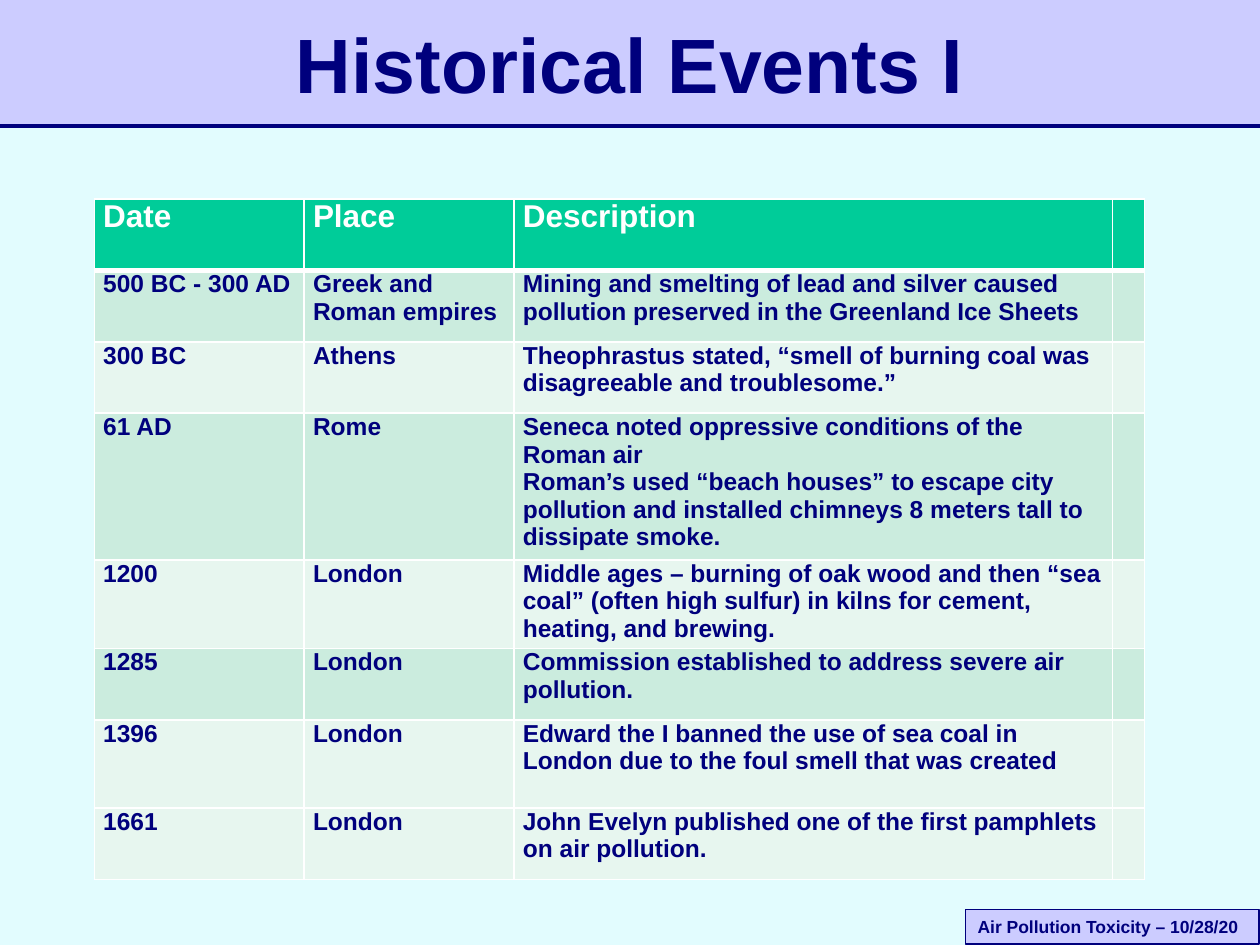
import pptx
import pptx.dml.color
import pptx.enum.shapes
import pptx.enum.text
import pptx.oxml
import pptx.oxml.ns
import pptx.util
from lxml import etree

Cm, Pt = pptx.util.Cm, pptx.util.Pt
RGBColor = pptx.dml.color.RGBColor
ALIGN = pptx.enum.text.PP_ALIGN
MIDDLE = pptx.enum.text.MSO_ANCHOR.MIDDLE

NAVY = RGBColor(0x00, 0x00, 0x7D)
LILAC = RGBColor(0xCC, 0xCC, 0xFF)
PALE_CYAN = RGBColor(0xE2, 0xFC, 0xFE)
GREEN = RGBColor(0x00, 0xCC, 0x99)
MINT = RGBColor(0xCB, 0xEC, 0xDE)
PALE_MINT = RGBColor(0xE7, 0xF6, 0xEF)
WHITE = RGBColor(0xFF, 0xFF, 0xFF)

SLIDE_W, SLIDE_H = 25.4, 19.05
BAND_H = 2.54

COL_WIDTHS = [4.23, 4.23, 12.07, 0.64]
HEADERS = ["Date", "Place", "Description"]
# Row height, fill and cell texts
EVENTS = [
    (1.44, MINT, ["500 BC - 300 AD", "Greek and Roman empires",
                  "Mining and smelting of lead and silver caused pollution "
                  "preserved in the Greenland Ice Sheets"]),
    (1.44, PALE_MINT, ["300 BC", "Athens",
                       "Theophrastus stated, “smell of burning coal was "
                       "disagreeable and troublesome.”"]),
    (2.96, MINT, ["61 AD", "Rome",
                  "Seneca noted oppressive conditions of the Roman air\n"
                  "Roman’s used “beach houses” to escape city pollution and "
                  "installed chimneys 8 meters tall to dissipate smoke."]),
    (1.78, PALE_MINT, ["1200", "London",
                       "Middle ages – burning of oak wood and then “sea coal” "
                       "(often high sulfur) in kilns for cement, heating, and brewing."]),
    (1.44, MINT, ["1285", "London",
                  "Commission established to address severe air pollution."]),
    (1.78, PALE_MINT, ["1396", "London",
                       "Edward the I banned the use of sea coal in London due to "
                       "the foul smell that was created"]),
    (1.44, PALE_MINT, ["1661", "London",
                       "John Evelyn published one of the first pamphlets on air pollution."]),
]


def set_attrs(obj, values):
    for name, value in values.items():
        setattr(obj, name, value)


class SlideBuilder:
    font = {"name": "Arial", "bold": True}

    def __init__(self, prs):
        self.s = prs.slides.add_slide(prs.slide_layouts[5])
        fill = self.s.background.fill
        fill.solid()
        fill.fore_color.rgb = PALE_CYAN

    def put_text(self, tf, text, size, color=NAVY, align=ALIGN.LEFT):
        tf.text = text
        for p in tf.paragraphs:
            p.alignment = align
            for r in p.runs:
                set_attrs(r.font, {**self.font, "size": Pt(size)})
                r.font.color.rgb = color

    def title(self, text, x, y, w, h):
        sp = self.s.shapes.title
        set_attrs(sp, {"left": Cm(x), "top": Cm(y), "width": Cm(w), "height": Cm(h)})
        set_attrs(sp.text_frame, {"vertical_anchor": MIDDLE, "word_wrap": True,
                                  "auto_size": pptx.enum.text.MSO_AUTO_SIZE.NONE})
        self.put_text(sp.text_frame, text, 44, align=ALIGN.CENTER)
        # Bring the title in front of the header band
        self.s.shapes.element.append(sp.element)

    def rect(self, x, y, w, h, line_width=None):
        sp = self.s.shapes.add_shape(pptx.enum.shapes.MSO_SHAPE.RECTANGLE,
                                     Cm(x), Cm(y), Cm(w), Cm(h))
        sp.shadow.inherit = False
        sp.fill.solid()
        sp.fill.fore_color.rgb = LILAC
        if line_width:
            sp.line.color.rgb = NAVY
            sp.line.width = Pt(line_width)
        else:
            sp.line.fill.background()
        return sp

    def label(self, text, x, y, w, h):
        tf = self.rect(x, y, w, h, 0.75).text_frame
        set_attrs(tf, {"word_wrap": True, "vertical_anchor": MIDDLE,
                       "margin_top": 0, "margin_bottom": 0})
        self.put_text(tf, text, 10)

    def line(self, x1, y1, x2, y2, width):
        cn = self.s.shapes.add_connector(pptx.enum.shapes.MSO_CONNECTOR.STRAIGHT,
                                         Cm(x1), Cm(y1), Cm(x2), Cm(y2))
        cn.line.color.rgb = NAVY
        cn.line.width = Pt(width)
        sp_pr = cn.element.find(pptx.oxml.ns.qn("p:spPr"))
        etree.SubElement(sp_pr, pptx.oxml.ns.qn("a:effectLst"))

    def borders(self, cell, widths):
        tc_pr = cell._tc.get_or_add_tcPr()
        for side, width in widths.items():
            tc_pr.append(pptx.oxml.parse_xml(
                f'<a:ln{side} {pptx.oxml.ns.nsdecls("a")} w="{Pt(width)}"><a:solidFill>'
                f'<a:srgbClr val="{WHITE}"/></a:solidFill></a:ln{side}>'))

    def table(self, x, y, col_widths, rows):
        """Each row is (height, fill, texts); the first one is the header."""
        heights = [row[0] for row in rows]
        table = self.s.shapes.add_table(len(rows), len(col_widths), Cm(x), Cm(y),
                                        Cm(sum(col_widths)), Cm(sum(heights))).table
        for col, width in zip(table.columns, col_widths):
            col.width = Cm(width)
        for i, (height, color, texts) in enumerate(rows):
            table.rows[i].height = Cm(height)
            for j, cell in enumerate(table.rows[i].cells):
                self.borders(cell, {"L": 1, "R": 1, "T": 3 if i == 1 else 1,
                                    "B": 3 if i == 0 else 1})
                cell.fill.solid()
                cell.fill.fore_color.rgb = color
                if j < len(texts):
                    set_attrs(cell, {"margin_left": Cm(0.18), "margin_right": Cm(0.18),
                                     "margin_top": 0, "margin_bottom": 0})
                    size, ink = (18, WHITE) if i == 0 else (14, NAVY)
                    self.put_text(cell.text_frame, texts[j], size, ink)


def main():
    prs = pptx.Presentation()
    set_attrs(prs, {"slide_width": Cm(SLIDE_W), "slide_height": Cm(SLIDE_H)})
    b = SlideBuilder(prs)

    # Header band and footer label
    b.rect(0, 0, SLIDE_W, BAND_H)
    b.line(0, BAND_H, SLIDE_W, BAND_H, 2)
    b.label("Air Pollution Toxicity – 10/28/20", 19.46, 18.34, 5.92, 0.69)

    # Title
    b.title("Historical Events I", 1.9, 0.2, 21.6, 2.14)

    # Table of events
    b.table(1.9, 4.01, COL_WIDTHS, [(1.44, GREEN, HEADERS)] + EVENTS)

    prs.save("out.pptx")


if __name__ == "__main__":
    main()
